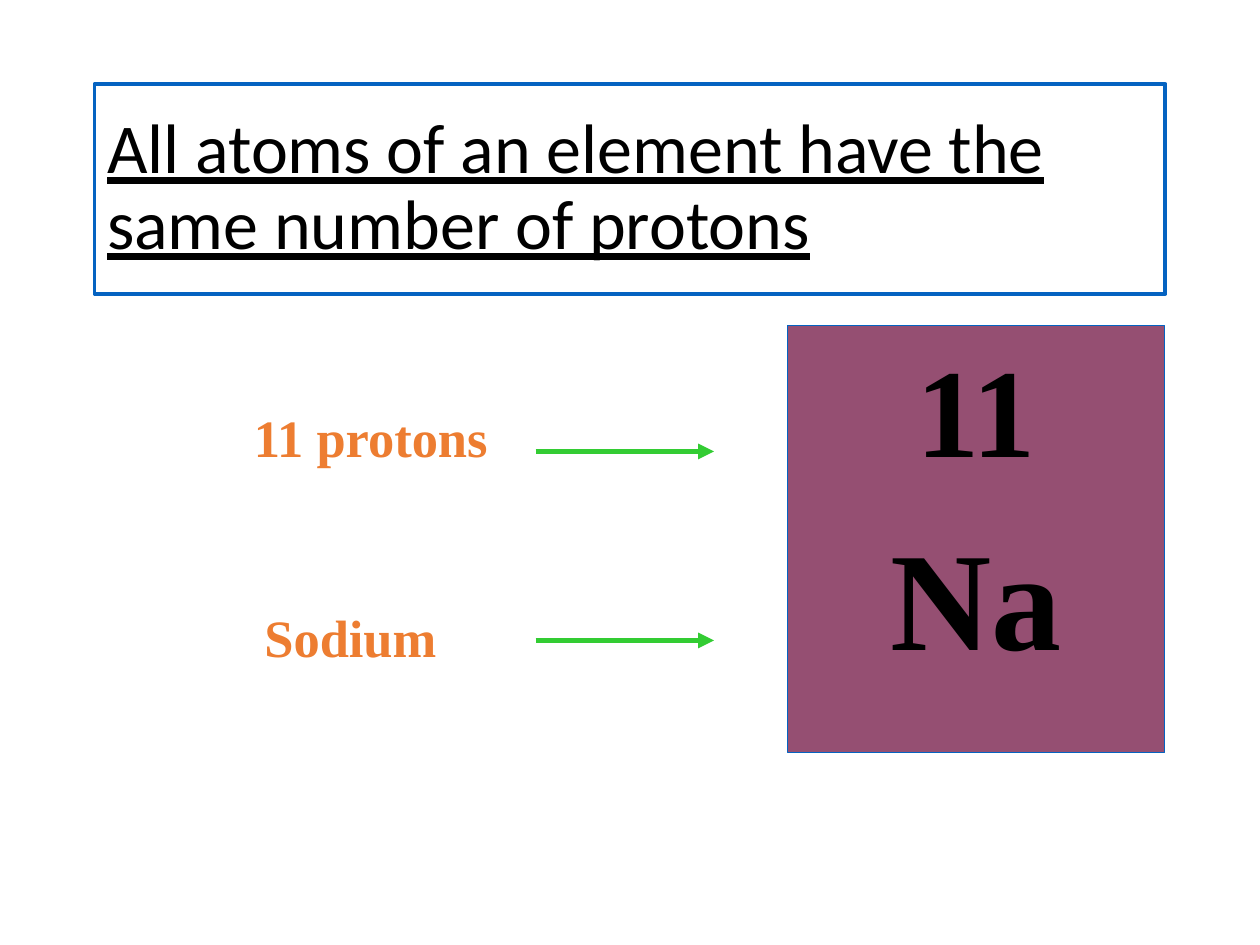
import pptx
import pptx.util
import pptx.dml.color
import pptx.enum.shapes
import pptx.enum.text
import pptx.oxml
import pptx.oxml.ns

Pt = pptx.util.Pt
RGB = pptx.dml.color.RGBColor
qn = pptx.oxml.ns.qn
ALIGN = pptx.enum.text.PP_ALIGN
ANCHOR = pptx.enum.text.MSO_ANCHOR

BLACK = RGB(0x00, 0x00, 0x00)
BLUE = RGB(0x05, 0x63, 0xC1)
PLUM = RGB(0x95, 0x4F, 0x72)
ORANGE = RGB(0xED, 0x7D, 0x31)
GREEN = RGB(0x33, 0xCC, 0x33)
SERIF = "Times New Roman"

TITLE = "All atoms of an element have the same number of protons"
TILE = [("11", 72), ("Na", 80)]
# text, left, top, width, height, arrow height
LABELS = [
    ("11 protons", 138, 228, 150.5, 43.2, 258),
    ("Sodium", 144, 342, 113, 43.2, 366),
]
ARROW = (306, 408)


def write(para, text, font, size, color, bold=False):
    run = para.add_run()
    run.text = text
    run.font.name = font
    run.font.size = Pt(size)
    run.font.color.rgb = color
    run.font.bold = bold
    return run


def place(shape, *box):
    shape.left, shape.top, shape.width, shape.height = map(Pt, box)


def edge(shape, color, width):
    shape.line.color.rgb = color
    shape.line.width = Pt(width)


def hang(para):
    """Hanging indent, with a gap of 20 % of the text size above."""
    props = para._p.get_or_add_pPr()
    props.set("marL", str(Pt(27)))
    props.set("indent", str(-Pt(27)))
    gap = pptx.oxml.parse_xml(
        '<a:spcBef xmlns:a="http://schemas.openxmlformats.org/drawingml/2006/main">'
        '<a:spcPct val="20000"/></a:spcBef>')
    props.insert(0, gap)


def arrow(slide, y):
    start, end = ARROW
    line = slide.shapes.add_connector(
        pptx.enum.shapes.MSO_CONNECTOR.STRAIGHT, Pt(start), Pt(y), Pt(end), Pt(y))
    edge(line, GREEN, 3)
    ln = line.line._get_or_add_ln()
    ln.append(ln.makeelement(qn("a:tailEnd"), {"type": "triangle"}))
    props = line._element.spPr
    props.append(props.makeelement(qn("a:effectLst"), {}))


deck = pptx.Presentation()
deck.slide_width, deck.slide_height = Pt(720), Pt(540)
slide = deck.slides.add_slide(deck.slide_layouts[5])

title = slide.shapes.title
place(title, 54, 48, 612, 120)
edge(title, BLUE, 2.25)
frame = title.text_frame
frame.word_wrap = True
frame.auto_size = pptx.enum.text.MSO_AUTO_SIZE.NONE
frame.vertical_anchor = ANCHOR.MIDDLE
para = frame.paragraphs[0]
para.alignment = ALIGN.LEFT
para.line_spacing = 0.9
write(para, TITLE, "Calibri", 40, BLACK).font.underline = True

tile = slide.shapes.add_shape(
    pptx.enum.shapes.MSO_SHAPE.RECTANGLE, Pt(450), Pt(186), Pt(215.5), Pt(244))
tile.shadow.inherit = False
tile.fill.solid()
tile.fill.fore_color.rgb = PLUM
edge(tile, BLUE, 0.75)
frame = tile.text_frame
frame.vertical_anchor = ANCHOR.TOP
for i, (text, size) in enumerate(TILE):
    para = frame.add_paragraph() if i else frame.paragraphs[0]
    para.alignment = ALIGN.CENTER
    hang(para)
    write(para, text, SERIF, size, BLACK, True)

for text, left, top, width, height, y in LABELS:
    label = slide.shapes.add_textbox(Pt(left), Pt(top), Pt(width), Pt(height))
    label.text_frame.word_wrap = False
    label.text_frame.auto_size = pptx.enum.text.MSO_AUTO_SIZE.SHAPE_TO_FIT_TEXT
    write(label.text_frame.paragraphs[0], text, SERIF, 30, ORANGE, True)
    arrow(slide, y)

deck.save("out.pptx")
